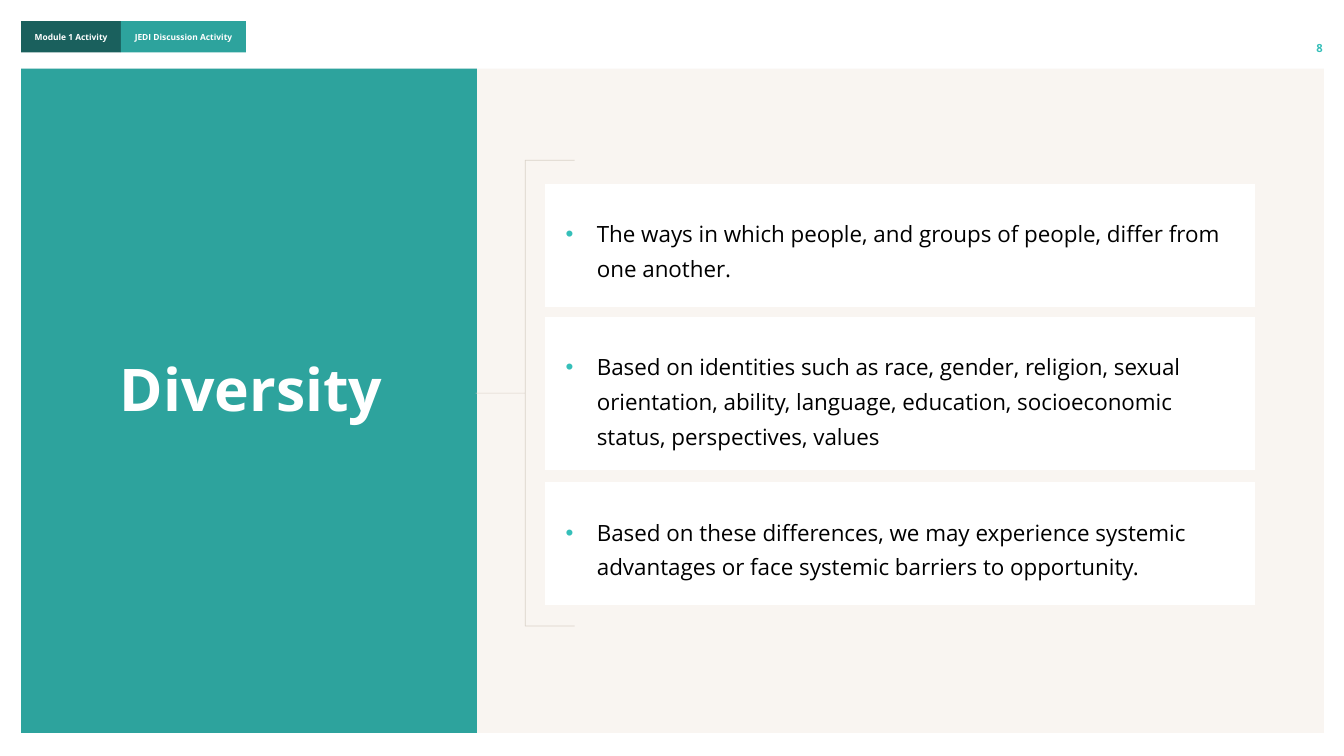
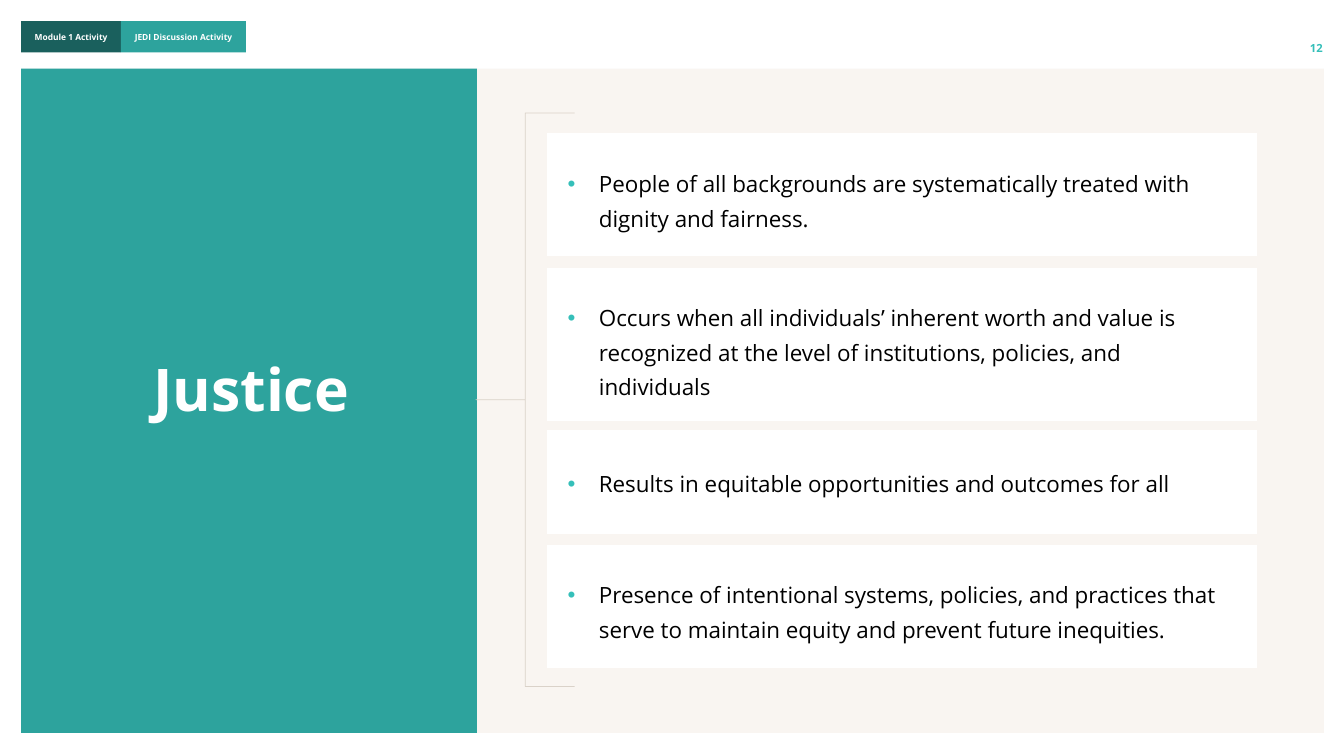
from lxml.etree import SubElement
from pptx import Presentation
from pptx.dml.color import RGBColor
from pptx.enum.shapes import MSO_SHAPE
from pptx.enum.text import MSO_ANCHOR, PP_ALIGN
from pptx.oxml.ns import qn
from pptx.util import Inches, Pt

COLORS = {
    "white": "FFFFFF", "black": "000000", "cream": "F9F5F1", "teal": "2DA39D",
    "dark_teal": "1A605D", "accent": "35BFB9", "rule": "DAD2C9",
}
FONT = "Open Sans"

# Left, top, width, height, fill, label
BANDS = [
    (0.21, 0.68, 12.92, 6.59, "cream", ""),
    (0.21, 0.21, 0.99, 0.31, "dark_teal", "Module 1 Activity"),
    (1.2, 0.21, 1.24, 0.31, "teal", "JEDI Discussion Activity"),
    (0.21, 0.68, 4.52, 6.59, "teal", ""),
]

# Each point: top, number of text lines, text
SLIDES = [
    {
        "title": "Diversity", "number": "8", "card_left": 5.41, "brace": (1.59, 4.62),
        "points": [
            (1.83, 2, "The ways in which people, and groups of people, differ from one another."),
            (3.15, 3, "Based on identities such as race, gender, religion, sexual orientation, "
                      "ability, language, education, socioeconomic status, perspectives, values"),
            (4.79, 2, "Based on these differences, we may experience systemic advantages "
                      "or face systemic barriers to opportunity."),
        ],
    },
    {
        "title": "Justice", "number": "12", "card_left": 5.43, "brace": (1.12, 5.69),
        "points": [
            (1.33, 2, "People of all backgrounds are systematically treated with dignity "
                      "and fairness."),
            (2.66, 3, "Occurs when all individuals’ inherent worth and value is recognized "
                      "at the level of institutions, policies, and individuals"),
            (4.27, 1, "Results in equitable opportunities and outcomes for all"),
            (5.41, 2, "Presence of intentional systems, policies, and practices that serve "
                      "to maintain equity and prevent future inequities."),
        ],
    },
]
CARD_WIDTH = 7.03
CARD_HEIGHTS = {1: 1.02, 2: 1.19, 3: 1.49}


def rgb(name):
    return RGBColor.from_string(COLORS[name])


def set_margins(target, *margins):
    for side, value in zip(("left", "top", "right", "bottom"), margins):
        setattr(target, f"margin_{side}", Inches(value))


def write(tf, text, size, color="white", bold=True, **paragraph_format):
    p = tf.paragraphs[0]
    for name, value in paragraph_format.items():
        setattr(p, name, value)
    r = p.add_run()
    r.text = text
    for name, value in {"name": FONT, "size": Pt(size), "bold": bold}.items():
        setattr(r.font, name, value)
    r.font.color.rgb = rgb(color)
    return p


def add_bullet(p):
    pPr = p._p.get_or_add_pPr()
    pPr.set("marL", str(Inches(0.31)))
    pPr.set("indent", str(Inches(-0.31)))
    SubElement(SubElement(pPr, qn("a:buClr")), qn("a:srgbClr"), val=COLORS["accent"])
    SubElement(pPr, qn("a:buFont"), typeface="Arial")
    SubElement(pPr, qn("a:buChar"), char="•")


def add_bands(layout, s):
    """Draw the shared bands on slide s, then move them to its layout."""
    for *box, fill, label in BANDS:
        sp = s.shapes.add_shape(MSO_SHAPE.RECTANGLE, *map(Inches, box))
        sp.shadow.inherit = False
        sp.fill.solid()
        sp.fill.fore_color.rgb = rgb(fill)
        sp.line.fill.background()
        if label:
            tf = sp.text_frame
            set_margins(tf, 0, 0.05, 0, 0.05)
            tf.vertical_anchor = MSO_ANCHOR.MIDDLE
            write(tf, label, 6, alignment=PP_ALIGN.CENTER)
        layout.shapes.element.append(sp.element)


def add_text(s, box, margins, anchor, text, size, **formats):
    tf = s.shapes.add_textbox(*map(Inches, box)).text_frame
    tf.word_wrap = True
    tf.vertical_anchor = anchor
    set_margins(tf, *margins)
    write(tf, text, size, **formats)


def add_card(s, left, top, lines, text):
    box = (left, top, CARD_WIDTH, CARD_HEIGHTS[lines])
    table = s.shapes.add_table(1, 1, *map(Inches, box)).table
    table.first_row = table.horz_banding = False
    cell = table.cell(0, 0)
    cell.fill.solid()
    cell.fill.fore_color.rgb = rgb("white")
    cell.vertical_anchor = MSO_ANCHOR.MIDDLE
    set_margins(cell, 0.2, 0.3, 0.2, 0.3)
    add_bullet(write(cell.text_frame, text, 16, "black", False,
                     line_spacing=1.14, space_after=Pt(6)))


def add_brace(s, top, height):
    sp = s.shapes.add_shape(MSO_SHAPE.LEFT_BRACE, *map(Inches, (4.72, top, 0.98, height)))
    sp.adjustments[0] = 0
    sp.adjustments[1] = 0.5
    sp.shadow.inherit = False
    sp.fill.background()
    sp.line.color.rgb = rgb("rule")
    sp.line.width = Pt(0.5)


def main():
    prs = Presentation()
    prs.slide_width, prs.slide_height = Inches(13.33), Inches(7.5)
    blank = prs.slide_layouts[6]
    for content in SLIDES:
        s = prs.slides.add_slide(blank)
        if len(prs.slides) == 1:
            add_bands(blank, s)
        add_text(s, (12.25, 0.21, 0.87, 0.33), (0.1, 0, 0, 0), MSO_ANCHOR.BOTTOM,
                 content["number"], 8, color="accent", alignment=PP_ALIGN.RIGHT)
        add_text(s, (0.84, 3.53, 3.3, 0.84), (0.1, 0.05, 0.1, 0.05), MSO_ANCHOR.TOP,
                 content["title"], 42, alignment=PP_ALIGN.CENTER, line_spacing=0.9)
        for point in content["points"]:
            add_card(s, content["card_left"], *point)
        add_brace(s, *content["brace"])
    prs.save("out.pptx")


if __name__ == "__main__":
    main()
